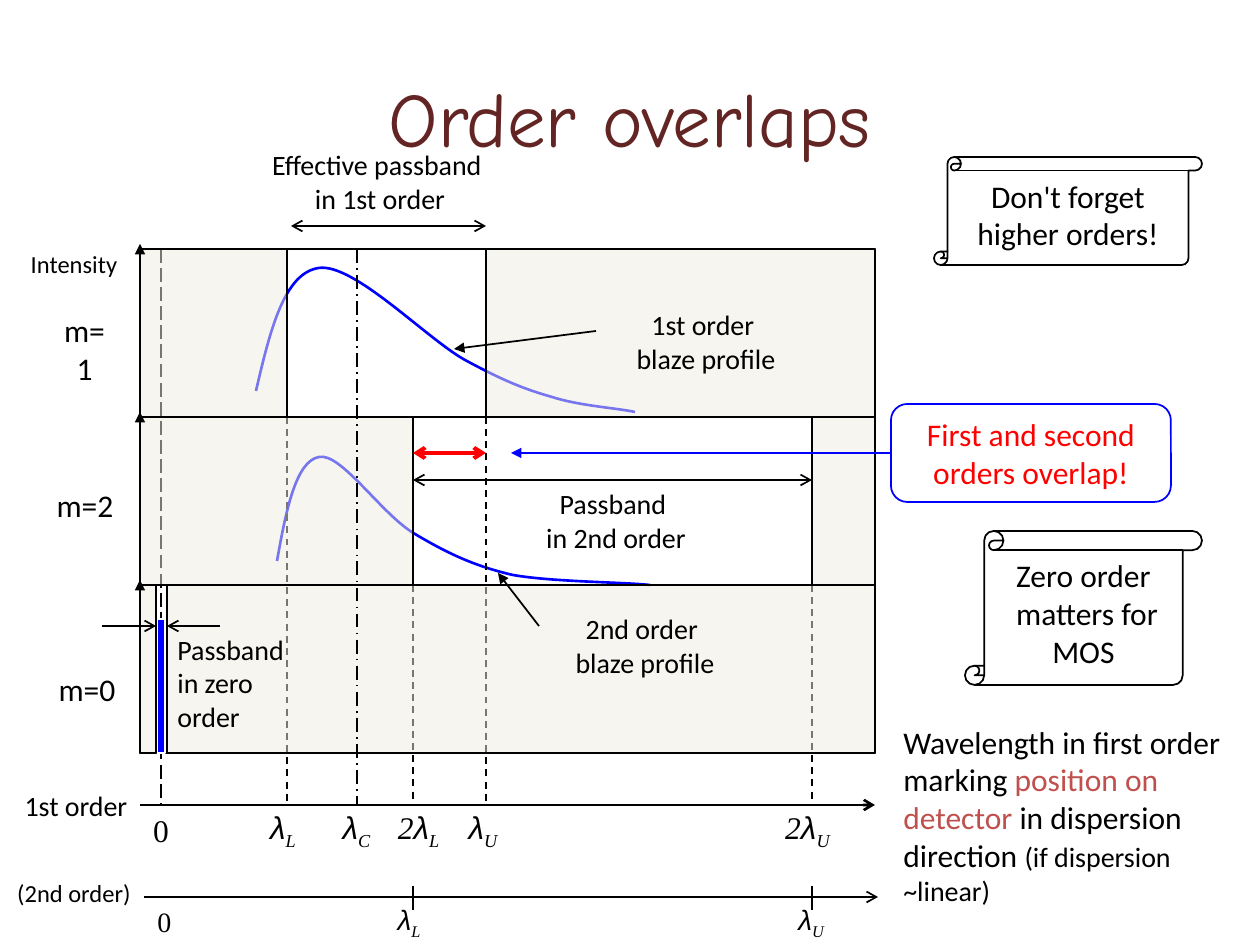
from dataclasses import dataclass
from typing import NamedTuple, Optional

from lxml.etree import SubElement
from pptx import Presentation
from pptx.dml.color import RGBColor
from pptx.enum.dml import MSO_LINE
from pptx.enum.shapes import MSO_CONNECTOR, MSO_SHAPE
from pptx.enum.text import MSO_ANCHOR, MSO_AUTO_SIZE, PP_ALIGN
from pptx.oxml.ns import qn
from pptx.util import Emu, Pt

EMU_PER_PX = 914400 / 126


@dataclass(frozen=True)
class Theme:
    black: str = "000000"
    white: str = "FFFFFF"
    title: str = "632523"
    shade: str = "EEECE1"
    blue: str = "0000FF"
    red: str = "FF0000"
    accent: str = "C0504D"
    title_font: str = "Comic Neue"
    body_font: str = "Calibri"
    math_font: str = "Times New Roman"
    greek_font: str = "Arial"
    title_size: int = 44
    large: int = 18
    medium: int = 16
    small: int = 14


THEME = Theme()


class Box(NamedTuple):
    left: int
    top: int
    width: int
    height: int


class Run(NamedTuple):
    text: str
    font: Optional[str] = None
    size: Optional[int] = None
    color: Optional[str] = None
    italic: bool = False
    subscript: bool = False


class Label(NamedTuple):
    box: Box
    lines: list
    size: int = THEME.medium
    font: str = THEME.body_font
    align: PP_ALIGN = PP_ALIGN.CENTER
    wrap: bool = False


class Stroke(NamedTuple):
    start: tuple
    end: tuple
    head: Optional[str] = None
    tail: Optional[str] = None
    dash: Optional[MSO_LINE] = None
    color: str = THEME.black
    width: float = 1


def px(length: int) -> Emu:
    return Emu(round(length * EMU_PER_PX))


def wavelength(subscript: str, multiple: str = "") -> list:
    runs = [Run(multiple, italic=True)] if multiple else []
    return runs + [Run("λ", THEME.greek_font, italic=True),
                   Run(subscript, italic=True, subscript=True)]


def write_text(frame, lines: list, *, size=THEME.medium, font=THEME.body_font,
               color=THEME.black, align=PP_ALIGN.CENTER, wrap=False, grow=True) -> None:
    frame.word_wrap = wrap
    frame.vertical_anchor = MSO_ANCHOR.MIDDLE
    frame.auto_size = MSO_AUTO_SIZE.SHAPE_TO_FIT_TEXT if grow else MSO_AUTO_SIZE.NONE
    for index, line in enumerate(lines):
        paragraph = frame.add_paragraph() if index else frame.paragraphs[0]
        paragraph.alignment = align
        for part in [Run(line)] if isinstance(line, str) else line:
            run = paragraph.add_run()
            run.text = part.text
            run.font.name = part.font or font
            run.font.size = Pt(part.size or size)
            run.font.color.rgb = RGBColor.from_string(part.color or color)
            if part.italic:
                run.font.italic = True
            if part.subscript:
                run._r.get_or_add_rPr().set("baseline", "-25000")


def add_label(slide, label: Label) -> None:
    frame = slide.shapes.add_textbox(*map(px, label.box)).text_frame
    write_text(frame, label.lines, size=label.size, font=label.font,
               align=label.align, wrap=label.wrap)


def add_panel(slide, box: Box, *, kind=MSO_SHAPE.RECTANGLE, fill=None, alpha=None,
              line=THEME.black, dash=None):
    panel = slide.shapes.add_shape(kind, *map(px, box))
    panel.shadow.inherit = False
    if fill:
        panel.fill.solid()
        panel.fill.fore_color.rgb = RGBColor.from_string(fill)
        if alpha:
            color = panel._element.spPr.find(".//" + qn("a:srgbClr"))
            SubElement(color, qn("a:alpha")).set("val", str(alpha * 1000))
    else:
        panel.fill.background()
    panel.line.color.rgb = RGBColor.from_string(line)
    panel.line.width = Pt(1)
    if dash:
        panel.line.dash_style = dash
    return panel


def add_stroke(slide, stroke: Stroke) -> None:
    connector = slide.shapes.add_connector(
        MSO_CONNECTOR.STRAIGHT, *map(px, stroke.start + stroke.end))
    connector.line.color.rgb = RGBColor.from_string(stroke.color)
    connector.line.width = Pt(stroke.width)
    if stroke.dash:
        connector.line.dash_style = stroke.dash
    for tag, arrow in (("a:headEnd", stroke.head), ("a:tailEnd", stroke.tail)):
        if arrow:
            SubElement(connector.line._get_or_add_ln(), qn(tag)).set("type", arrow)
    SubElement(connector._element.spPr, qn("a:effectLst"))


def add_curve(slide, points: list) -> None:
    """Draw a start point followed by triples of Bezier points."""
    builder = slide.shapes.build_freeform(*points[0], scale=EMU_PER_PX)
    builder.add_line_segments(points[1:], close=False)
    curve = builder.convert_to_shape()
    outline = curve._element.spPr.find(".//" + qn("a:path"))
    segments = outline.findall(qn("a:lnTo"))
    for first in range(0, len(segments), 3):
        bezier = SubElement(outline, qn("a:cubicBezTo"))
        for segment in segments[first:first + 3]:
            bezier.append(segment[0])
            outline.remove(segment)
    curve.shadow.inherit = False
    curve.fill.background()
    curve.line.color.rgb = RGBColor.from_string(THEME.blue)
    curve.line.width = Pt(1.5)


# Diagram grid: wavelength positions across, one row per order
LEFT, RIGHT, ZERO, AXIS, AXIS_2 = 140, 875, 161, 805, 897
LOWER, CENTRE, TWICE_LOWER, UPPER, TWICE_UPPER = 287, 357, 413, 486, 812
ROW = 168
FIRST, SECOND, ZEROTH = (249 + ROW * i for i in range(3))

BLAZE_PROFILES = [
    [(277, 561), (286, 510), (296, 461), (319, 457), (341, 452), (382, 515), (415, 534),
     (447, 553), (474, 566), (513, 575), (553, 582), (622, 582), (650, 585)],
    [(256, 391), (270, 331), (284, 273), (319, 268), (354, 263), (427, 339), (465, 360),
     (504, 381), (524, 389), (552, 397), (580, 406), (617, 408), (635, 412)],
]
OPEN_PANELS = [
    (LEFT, RIGHT, FIRST, None), (LEFT, RIGHT, SECOND, None), (LEFT, RIGHT, ZEROTH, None),
    (LOWER, UPPER, FIRST, MSO_LINE.LONG_DASH),
    (TWICE_LOWER, TWICE_UPPER, SECOND, MSO_LINE.LONG_DASH),
]
BLOCKED_PANELS = [
    (LEFT, LOWER, FIRST), (UPPER, RIGHT, FIRST),
    (LEFT, TWICE_LOWER, SECOND), (TWICE_UPPER, RIGHT, SECOND),
    (LEFT, 156, ZEROTH), (167, RIGHT, ZEROTH),
]
GUIDES = [Stroke((x, top), (x, AXIS), dash=MSO_LINE.DASH) for x, top in (
    (LOWER, SECOND), (TWICE_LOWER, ZEROTH), (TWICE_UPPER, ZEROTH), (UPPER, SECOND))]
INTENSITY_AXES = [Stroke((LEFT, top + ROW - 5), (LEFT, top - 5), tail="triangle")
                  for top in (FIRST, SECOND, ZEROTH)]
TICKS = [Stroke((x, 886), (x, 910)) for x in (TWICE_LOWER, TWICE_UPPER)]
ARROWS = [
    Stroke((LEFT, AXIS), (RIGHT, AXIS), tail="arrow", width=1.5),
    Stroke((144, AXIS_2), (878, AXIS_2), tail="arrow"),
    Stroke((291, 226), (UPPER, 226), "arrow", "arrow"),
    Stroke((TWICE_LOWER, 480), (TWICE_UPPER, 480), "arrow", "arrow"),
    Stroke((596, 331), (454, 349), tail="triangle"),
    Stroke((539, 626), (498, 573), tail="triangle"),
    Stroke((220, 626), (167, 626), tail="arrow"),
    Stroke((156, 626), (102, 626), head="arrow"),
    Stroke((TWICE_LOWER, 453), (UPPER, 453), "arrow", "arrow", color=THEME.red, width=2.25),
    Stroke((CENTRE, FIRST), (CENTRE, AXIS), dash=MSO_LINE.LONG_DASH_DOT),
    Stroke((891, 453), (511, 453), tail="triangle", color=THEME.blue),
]
AXIS_LABELS = [Label(Box(x, AXIS, width, 50), [runs], THEME.large, THEME.math_font)
               for x, width, runs in (
                   (140, 42, "0"), (256, 54, wavelength("L")), (328, 57, wavelength("C")),
                   (383, 71, wavelength("L", "2")), (454, 58, wavelength("U")),
                   (771, 73, wavelength("U", "2")))]
AXIS_2_LABELS = [Label(Box(x, 898, width, 47), [runs], THEME.medium, THEME.math_font)
                 for x, width, runs in (
                     (145, 39, "0"), (383, 52, wavelength("L")), (784, 54, wavelength("U")))]
ANNOTATIONS = [
    Label(Box(237, 141, 286, 81), ["Effective passband ", "in 1st order"]),
    Label(Box(610, 301, 192, 81), ["1st order ", "blaze profile"]),
    Label(Box(549, 605, 192, 81), ["2nd order ", "blaze profile"]),
    Label(Box(523, 480, 186, 81), ["Passband ", "in 2nd order"]),
    Label(Box(165, 626, 152, 113), ["Passband", "in zero", "order"], align=PP_ALIGN.LEFT),
    Label(Box(44, 324, 81, 50), ["m=1"], THEME.large, wrap=True),
    Label(Box(42, 480, 86, 50), ["m=2"], THEME.large),
    Label(Box(44, 664, 86, 50), ["m=0"], THEME.large),
    Label(Box(8, 243, 132, 42), ["Intensity"], THEME.small),
    Label(Box(3, 782, 146, 47), ["1st order"]),
    Label(Box(-5, 872, 158, 42), ["(2nd order)"], THEME.small),
    Label(Box(891, 716, 354, 198), [[
        Run("Wavelength in first order marking "),
        Run("position on detector", color=THEME.accent),
        Run(" in dispersion direction "),
        Run("(if dispersion ~linear)", size=THEME.medium)]],
        THEME.large, align=PP_ALIGN.LEFT, wrap=True),
]
CALLOUTS = [
    (MSO_SHAPE.ROUNDED_RECTANGLE, Box(891, 404, 280, 98),
     ["First and second", "orders overlap!"], THEME.blue, THEME.red, False),
    (MSO_SHAPE.VERTICAL_SCROLL, Box(934, 157, 268, 108),
     ["Don't forget higher orders!"], THEME.black, THEME.black, True),
    (MSO_SHAPE.VERTICAL_SCROLL, Box(965, 531, 237, 154),
     ["Zero order", " matters for MOS"], THEME.black, THEME.black, True),
]


def main() -> None:
    deck = Presentation()
    deck.slide_width, deck.slide_height = px(1260), px(945)
    slide = deck.slides.add_slide(deck.slide_layouts[5])

    # Title
    title = slide.shapes.title
    title.left, title.top, title.width, title.height = map(px, Box(63, 38, 1134, 157))
    write_text(title.text_frame, ["Order overlaps"], size=THEME.title_size,
               font=THEME.title_font, color=THEME.title, wrap=True, grow=False)

    # Blaze profiles, dimmed where the passband is blocked
    for profile in BLAZE_PROFILES:
        add_curve(slide, profile)
    for left, right, top, dash in OPEN_PANELS:
        add_panel(slide, Box(left, top, right - left, ROW), dash=dash)
    add_stroke(slide, Stroke((ZERO, FIRST), (ZERO, AXIS), dash=MSO_LINE.LONG_DASH))
    add_panel(slide, Box(157, 619, 8, 134), fill=THEME.blue, line=THEME.white)
    for guide in GUIDES:
        add_stroke(slide, guide)
    for left, right, top in BLOCKED_PANELS:
        add_panel(slide, Box(left, top, right - left, ROW), fill=THEME.shade, alpha=50)

    # Axes, arrows and labels
    for stroke in INTENSITY_AXES + TICKS + ARROWS:
        add_stroke(slide, stroke)
    for label in AXIS_LABELS + AXIS_2_LABELS + ANNOTATIONS:
        add_label(slide, label)

    # Remarks
    for kind, box, lines, outline, color, wrap in CALLOUTS:
        callout = add_panel(slide, box, kind=kind, line=outline)
        write_text(callout.text_frame, lines, size=THEME.large, color=color, wrap=wrap)

    deck.save("out.pptx")


if __name__ == "__main__":
    main()
